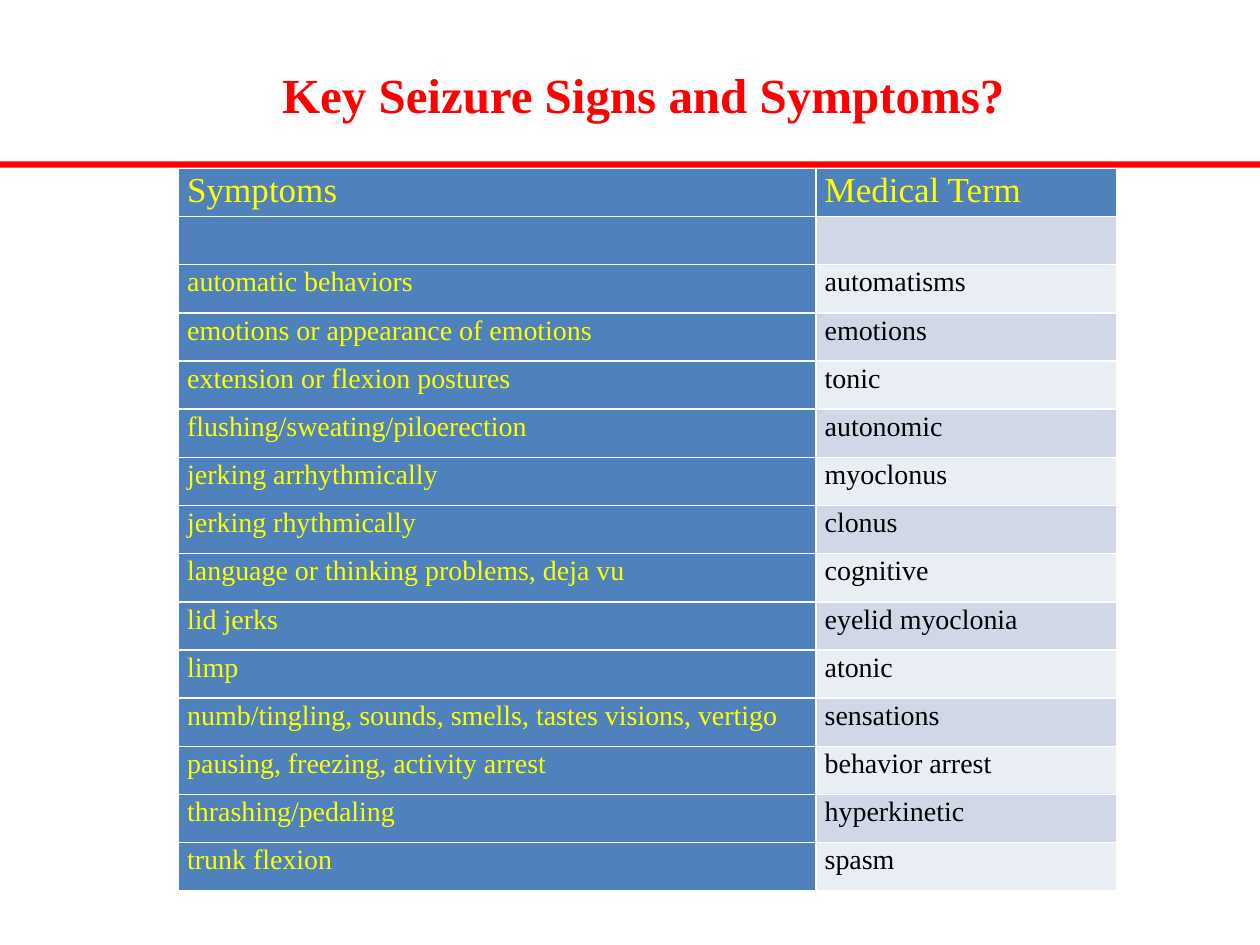
from pptx import Presentation
from pptx.dml.color import RGBColor
from pptx.enum.shapes import MSO_SHAPE
from pptx.enum.text import MSO_ANCHOR, PP_ALIGN
from pptx.oxml import parse_xml
from pptx.oxml.ns import nsdecls
from pptx.util import Pt

ROWS = [
    ("Symptoms", "Medical Term"),
    ("", ""),
    ("automatic behaviors", "automatisms"),
    ("emotions or appearance of emotions", "emotions"),
    ("extension or flexion postures", "tonic"),
    ("flushing/sweating/piloerection", "autonomic"),
    ("jerking arrhythmically", "myoclonus"),
    ("jerking rhythmically", "clonus"),
    ("language or thinking problems, deja vu", "cognitive"),
    ("lid jerks", "eyelid myoclonia"),
    ("limp", "atonic"),
    ("numb/tingling, sounds, smells, tastes visions, vertigo", "sensations"),
    ("pausing, freezing, activity arrest", "behavior arrest"),
    ("thrashing/pedaling", "hyperkinetic"),
    ("trunk flexion", "spasm"),
]


def color(hex_value):
    return RGBColor.from_string(hex_value)


class SlideBuilder:
    font = "Times New Roman"
    red, yellow, black, white = "FF0000", "FFFF00", "000000", "FFFFFF"
    blue, bands = "4F81BD", ("E9EDF4", "D0D8E8")

    def __init__(self, slide):
        self.slide = slide

    def run(self, paragraph, text, size, text_color, bold=False):
        run = paragraph.add_run()
        run.text = text
        run.font.name = self.font
        run.font.size = Pt(size)
        run.font.bold = bold
        run.font.color.rgb = color(text_color)

    def title(self, text, left, top, width, height):
        shape = self.slide.shapes.title
        shape.left, shape.top = Pt(left), Pt(top)
        shape.width, shape.height = Pt(width), Pt(height)
        frame = shape.text_frame
        frame.word_wrap = False
        frame.vertical_anchor = MSO_ANCHOR.TOP
        paragraph = frame.paragraphs[0]
        paragraph.alignment = PP_ALIGN.LEFT
        self.run(paragraph, text, 28, self.red, bold=True)

    def bar(self, left, top, width, height):
        shape = self.slide.shapes.add_shape(
            MSO_SHAPE.RECTANGLE, Pt(left), Pt(top), Pt(width), Pt(height))
        shape.shadow.inherit = False
        shape.fill.solid()
        shape.fill.fore_color.rgb = color(self.red)
        shape.line.fill.background()

    def borders(self, cell):
        properties = cell._tc.get_or_add_tcPr()
        for index, side in enumerate(("lnL", "lnR", "lnT", "lnB")):
            properties.insert(index, parse_xml(
                f'<a:{side} {nsdecls("a")} w="{Pt(1)}"><a:solidFill>'
                f'<a:srgbClr val="{self.white}"/></a:solidFill></a:{side}>'))

    def cell(self, cell, text, size, text_color, fill):
        cell.fill.solid()
        cell.fill.fore_color.rgb = color(fill)
        cell.margin_left = cell.margin_right = Pt(5)
        cell.margin_top = cell.margin_bottom = Pt(0)
        self.borders(cell)
        if text:
            paragraph = cell.text_frame.paragraphs[0]
            paragraph.line_spacing = 1.07
            paragraph.space_after = Pt(8)
            self.run(paragraph, text, size, text_color)

    def table(self, rows, left, top, column_widths, row_height):
        table = self.slide.shapes.add_table(
            len(rows), len(column_widths), Pt(left), Pt(top),
            Pt(sum(column_widths)), Pt(row_height * len(rows))).table
        table.horz_banding = False
        for column, width in zip(table.columns, column_widths):
            column.width = Pt(width)
        for row_index, texts in enumerate(rows):
            table.rows[row_index].height = Pt(row_height)
            for column_index, text in enumerate(texts):
                # The header row and the first column share one look
                heading = row_index == 0 or column_index == 0
                self.cell(
                    table.cell(row_index, column_index), text,
                    20 if row_index == 0 else 16,
                    self.yellow if heading else self.black,
                    self.blue if heading else self.bands[row_index % 2])


def main():
    presentation = Presentation()
    presentation.slide_width, presentation.slide_height = Pt(720), Pt(540)
    title_only = presentation.slide_layouts[5]
    builder = SlideBuilder(presentation.slides.add_slide(title_only))

    # Heading with its rule
    builder.title("Key Seizure Signs and Symptoms?", 154, 33.2, 432, 41)
    builder.bar(0, 92.2, 720, 3.6)

    # Symptoms and their medical terms
    builder.table(ROWS, 102, 96.2, (364.3, 171.7), 27.54)

    presentation.save("out.pptx")


if __name__ == "__main__":
    main()
